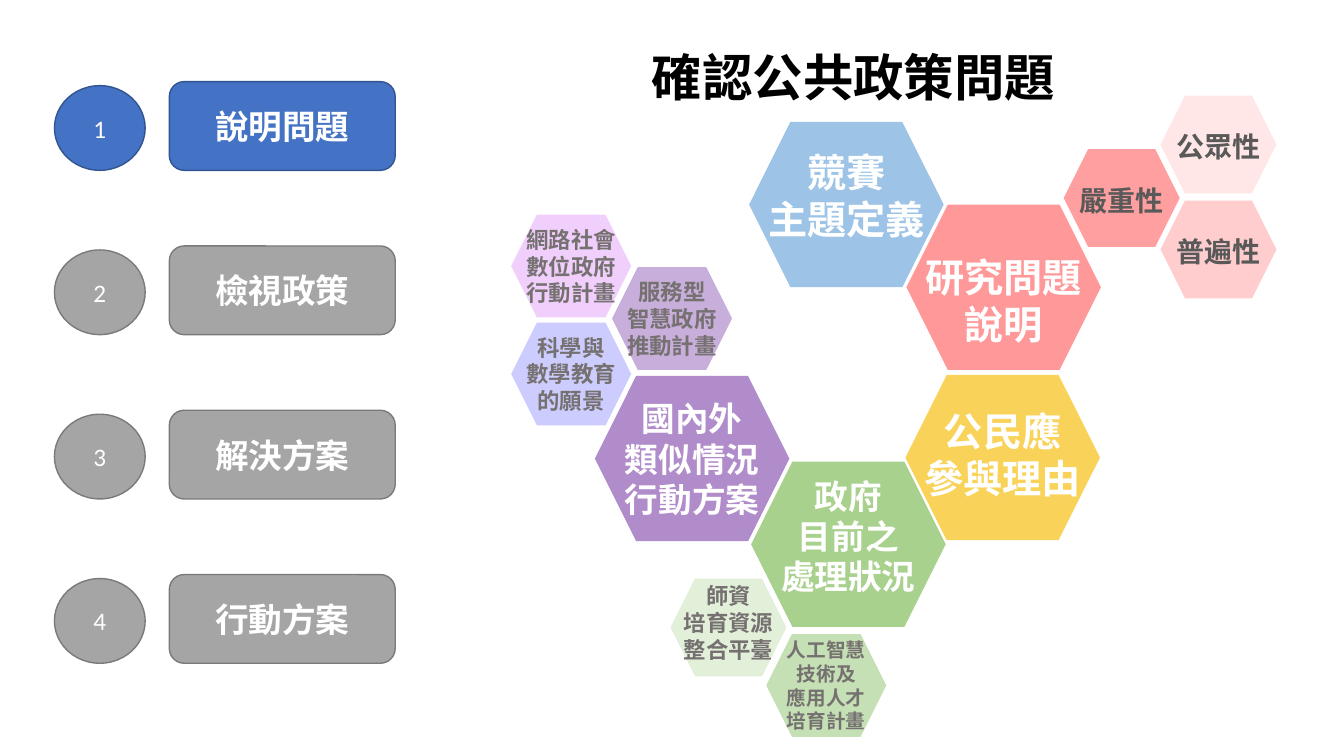
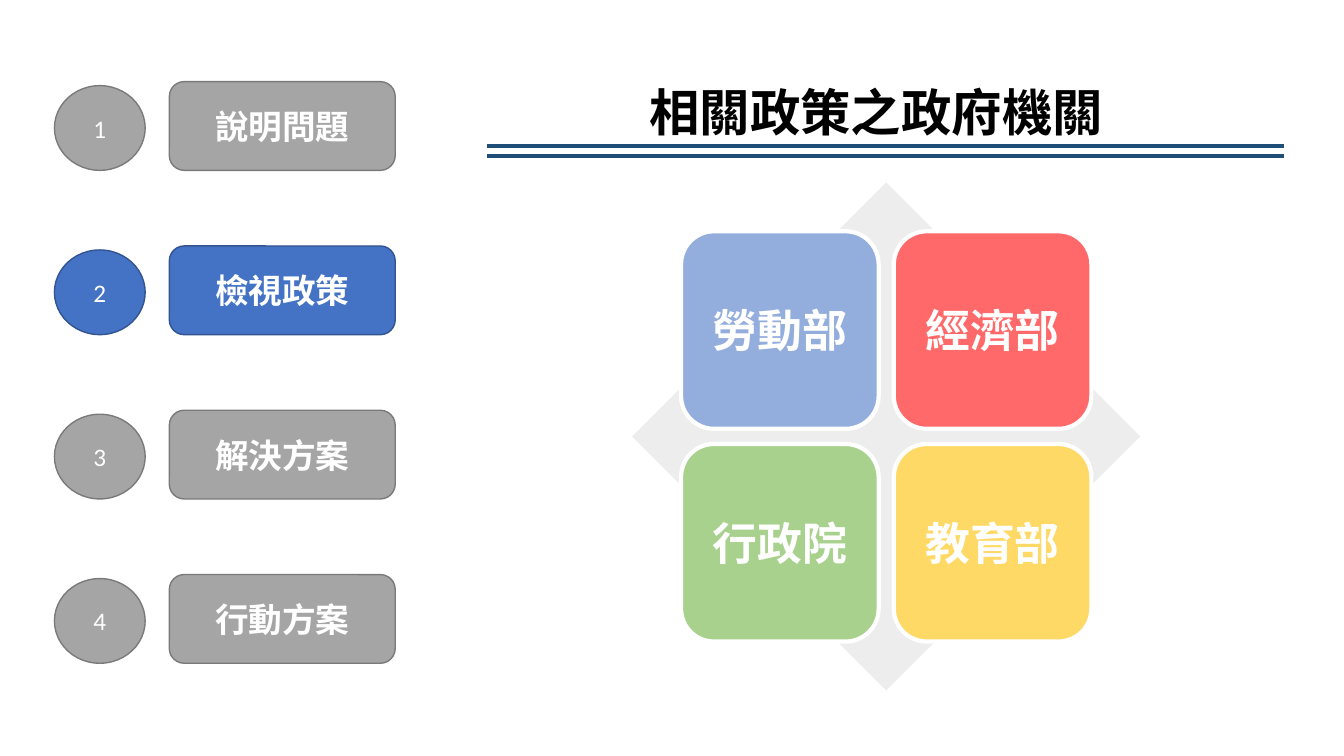
from lxml import etree
from pptx import Presentation
from pptx.dml.color import RGBColor
from pptx.enum.shapes import MSO_CONNECTOR, MSO_SHAPE
from pptx.enum.text import MSO_ANCHOR, MSO_AUTO_SIZE, PP_ALIGN
from pptx.oxml.ns import qn
from pptx.util import Inches, Pt

CIRCLE = MSO_SHAPE.FLOWCHART_CONNECTOR
ROUNDED = MSO_SHAPE.ROUNDED_RECTANGLE
HEXAGON = MSO_SHAPE.HEXAGON
DIAMOND = MSO_SHAPE.DIAMOND
STRAIGHT = MSO_CONNECTOR.STRAIGHT
MIDDLE = MSO_ANCHOR.MIDDLE
CENTER = PP_ALIGN.CENTER
NO_AUTOFIT = MSO_AUTO_SIZE.NONE

CJK_FONT = "Noto Sans CJK SC"
DIGIT_FONT = "Calibri"
LINE_HEIGHT = 1.2
TITLE_ONLY = 5

COLORS = {
    "white": "FFFFFF", "black": "000000",
    "active": "4472C4", "active_edge": "325491",
    "idle": "A5A5A5", "idle_edge": "7A7A7A",
    "rule": "1F4E79", "diamond": "EDEDED",
    "dark_gray": "595959", "gray": "767171",
    "sky": "9DC3E6", "salmon": "FF9999", "yellow": "F9D359",
    "green": "A9D18E", "purple": "B18CCA",
    "red_mid": "FF9F9F", "red_light": "FFCDCD", "red_pale": "FFE7E7",
    "green_pale": "E2F0D9", "green_light": "C5E0B4",
    "pink": "F1CFFD", "lilac": "C8AEDA", "lavender": "CCCCFF",
    "blue": "93ADDD", "red": "FF6969", "gold": "FFD966",
}

STEPS = ["說明問題", "檢視政策", "解決方案", "行動方案"]

# Hexagon sizes: width, height
LARGE, SMALL, MEDIUM = (1.93, 1.64), (1.15, 0.97), (1.19, 1.02)

# Hexagons: left, top, size, fill, text, font size, text colour, text shift down
TOPICS = [
    (7.43, 1.21, LARGE, "sky", "競賽\n主題定義", 28, "white", -0.09),
    (8.99, 2.03, LARGE, "salmon", "研究問題\n說明", 28, "white", 0.13),
    (7.45, 4.58, LARGE, "green", "政府\n目前之\n處理狀況", 24, "white", -0.08),
    (8.98, 3.72, LARGE, "yellow", "公民應\n參與理由", 28, "white", -0.03),
    (5.9, 3.73, LARGE, "purple", "國內外\n類似情況\n行動方案", 24, "white", 0),
    (10.55, 1.48, SMALL, "red_mid", "嚴重性", 20, "dark_gray", 0.02),
    (11.51, 1.99, SMALL, "red_light", "普遍性", 20, "dark_gray", 0.02),
    (11.51, 0.95, SMALL, "red_pale", "公眾性", 20, "dark_gray", 0.02),
    (6.65, 5.74, SMALL, "green_pale", "師資\n培育資源\n整合平臺", 16, "gray", -0.05),
    (7.6, 6.29, MEDIUM, "green_light",
     "人工智慧\n技術及\n應用人才\n培育計畫", 14, "gray", 0),
    (5.07, 2.13, MEDIUM, "pink", "網路社會\n數位政府\n行動計畫", 16, "gray", 0),
    (6.07, 2.65, MEDIUM, "lilac", "服務型\n智慧政府\n推動計畫", 16, "gray", 0),
    (5.07, 3.2, MEDIUM, "lavender", "科學與\n數學教育\n的願景", 16, "gray", 0),
]

AGENCIES = [("勞動部", "blue"), ("經濟部", "red"),
            ("行政院", "green"), ("教育部", "gold")]


def rgb(name):
    return RGBColor.from_string(COLORS[name])


def write(shape, text, size, color="white", font=CJK_FONT, bold=True, shift=0):
    """Centre the lines of text in a shape, moved down by shift inches."""
    frame = shape.text_frame
    frame.word_wrap = False
    frame.auto_size = NO_AUTOFIT
    frame.vertical_anchor = MIDDLE
    frame.margin_left = frame.margin_right = 0
    frame.margin_top = Inches(max(0, 2 * shift))
    frame.margin_bottom = Inches(max(0, -2 * shift))
    frame.text = text
    for paragraph in frame.paragraphs:
        paragraph.alignment = CENTER
        paragraph.line_spacing = Pt(round(size * LINE_HEIGHT, 1))
        paragraph.space_before = paragraph.space_after = Pt(0)
        run = paragraph.runs[0]
        run.font.size = Pt(size)
        run.font.bold = bold
        run.font.color.rgb = rgb(color)
        run.font.name = font
        east_asian = etree.SubElement(run.font._element, qn("a:ea"))
        east_asian.set("typeface", font)


def add_box(slide, kind, left, top, width, height, fill, edge=None, weight=1):
    shape = slide.shapes.add_shape(
        kind, Inches(left), Inches(top), Inches(width), Inches(height))
    shape.shadow.inherit = False
    shape.fill.solid()
    shape.fill.fore_color.rgb = rgb(fill)
    if edge:
        shape.line.color.rgb = rgb(edge)
        shape.line.width = Pt(weight)
    else:
        shape.line.fill.background()
    return shape


def add_title(slide, text, left, top, width, height=0.71):
    title = slide.shapes.title
    title.left, title.top = Inches(left), Inches(top)
    title.width, title.height = Inches(width), Inches(height)
    write(title, text, 36, color="black")


def add_steps(slide, current, left=0.54, top=0.85, pitch=1.63):
    """Numbered steps down the left side, the current one in blue."""
    for number, step in enumerate(STEPS, start=1):
        state = "active" if number == current else "idle"
        y = top + (number - 1) * pitch
        badge = add_box(slide, CIRCLE, left, y, 0.9, 0.84, state, state + "_edge")
        write(badge, str(number), 18, font=DIGIT_FONT, bold=False)
        button = add_box(slide, ROUNDED, left + 1.14, y - 0.04, 2.24, 0.88,
                         state, state + "_edge")
        write(button, step, 24)


def add_topics(slide):
    for left, top, size, fill, text, points, color, shift in TOPICS:
        topic = add_box(slide, HEXAGON, left, top, *size, fill)
        write(topic, text, points, color=color, shift=shift)


def add_agencies(slide, left, top, side):
    """Two by two tiles centred on a diamond."""
    add_box(slide, DIAMOND, left, top, side, side, "diamond")
    tile, gap = 1.96, 0.15
    inset = (side - 2 * tile - gap) / 2
    for index, (name, fill) in enumerate(AGENCIES):
        row, column = divmod(index, 2)
        agency = add_box(slide, ROUNDED,
                         left + inset + column * (tile + gap),
                         top + inset + row * (tile + gap),
                         tile, tile, fill, "white", 3)
        write(agency, name, 32)


def add_double_rule(slide, left, top, width, gap=0.1):
    for y in (top, top + gap):
        rule = slide.shapes.add_connector(
            STRAIGHT, Inches(left), Inches(y), Inches(left + width), Inches(y))
        rule.line.color.rgb = rgb("rule")
        rule.line.width = Pt(3)
        etree.SubElement(rule._element.spPr, qn("a:effectLst"))


def new_slide(deck, current):
    slide = deck.slides.add_slide(deck.slide_layouts[TITLE_ONLY])
    add_steps(slide, current)
    return slide


def build_problem_slide(deck):
    slide = new_slide(deck, 1)
    add_title(slide, "確認公共政策問題", 5.27, 0.4, 6.39)
    add_topics(slide)


def build_policy_slide(deck):
    slide = new_slide(deck, 2)
    add_agencies(slide, 6.27, 1.81, 5.04)
    add_double_rule(slide, 4.83, 1.45, 7.9)
    add_title(slide, "相關政策之政府機關", 6.27, 0.75, 4.84)


def main():
    deck = Presentation()
    deck.slide_width, deck.slide_height = Inches(13.33), Inches(7.5)
    build_problem_slide(deck)
    build_policy_slide(deck)
    deck.save("out.pptx")


if __name__ == "__main__":
    main()
